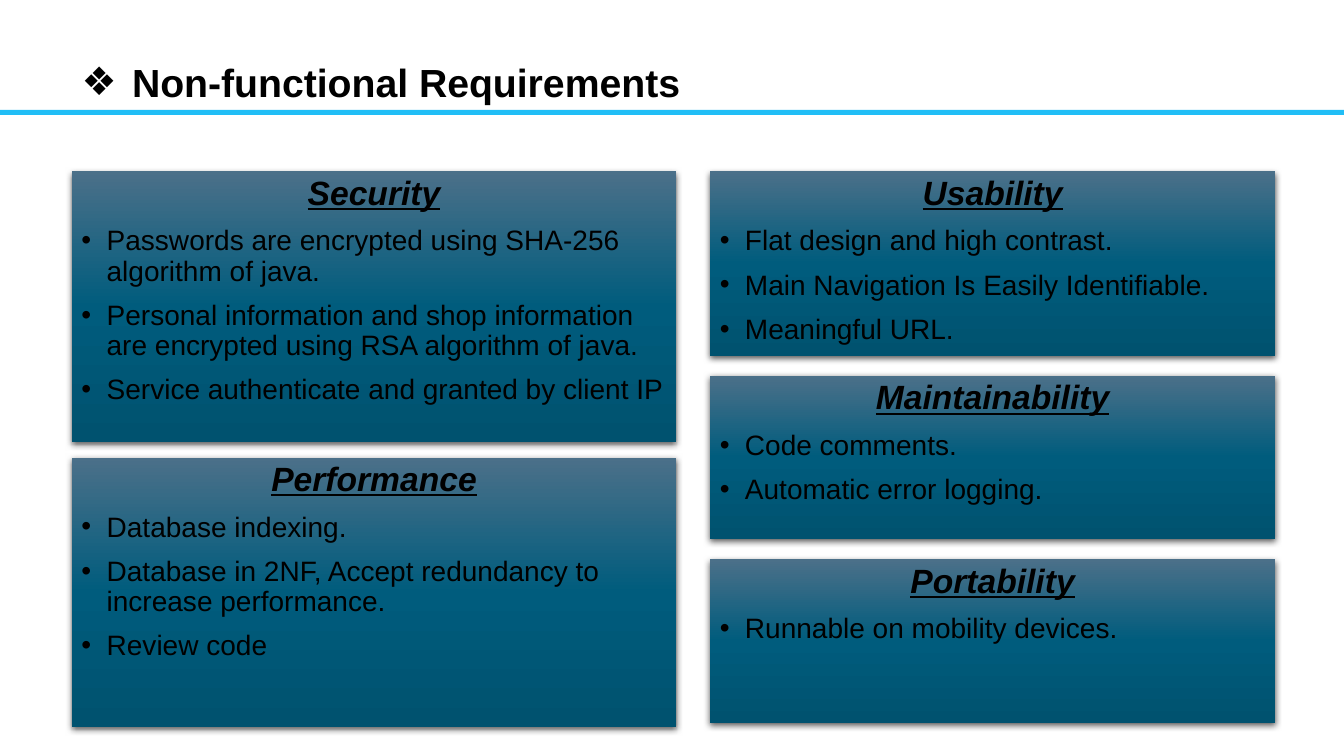
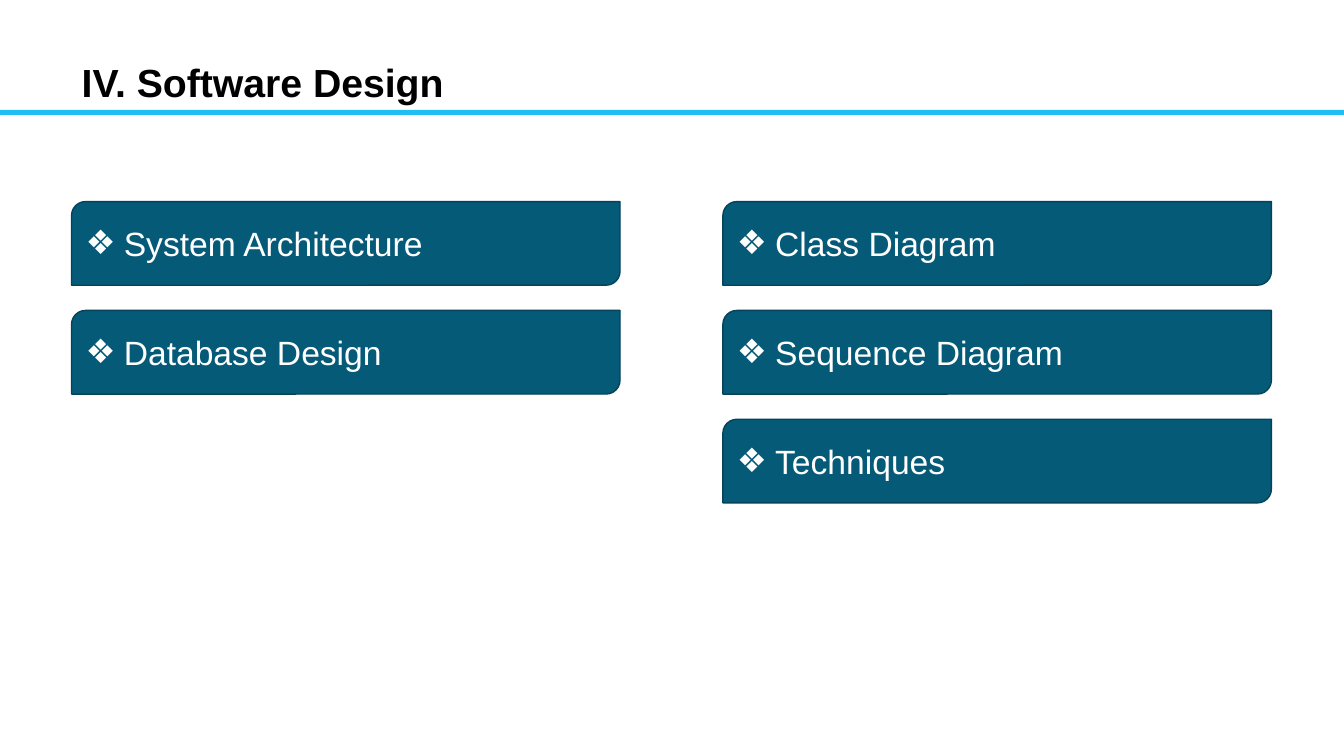
from copy import deepcopy

from pptx import Presentation
from pptx.dml.color import RGBColor
from pptx.enum.shapes import MSO_SHAPE
from pptx.enum.text import MSO_ANCHOR, PP_ALIGN
from pptx.oxml import parse_xml
from pptx.oxml.ns import nsdecls, qn
from pptx.util import Inches, Pt

SLIDE_W, SLIDE_H = 13.33, 7.5
MARGIN = 0.71
COLORS = {
    "band": "21BEF6",
    "text": "000000",
    "card_top": "4B7089",
    "card_middle": "005C7D",
    "card_bottom": "00526F",
    "tile": "055A78",
    "tile_edge": "044359",
    "tile_text": "FFFFFF",
}
FONTS = {
    "title": {"name": "Arial", "size": Pt(28), "bold": True},
    "heading": {"name": "Arial", "size": Pt(24), "bold": True, "italic": True, "underline": True},
    "body": {"name": "Arial", "size": Pt(20)},
    "tile": {"name": "Arial", "size": Pt(24)},
}
CARD_PARAGRAPH = {"line_spacing": 0.9, "space_after": Pt(0)}

# Each column: left, width, gap, then cards of (height, heading, points)
REQUIREMENTS = [
    (MARGIN, 6, 0.15, [
        (2.69, "Security", [
            "Passwords are encrypted using SHA-256 algorithm of java.",
            "Personal information and shop information are encrypted using RSA algorithm of java.",
            "Service authenticate and granted by client IP",
        ]),
        (2.67, "Performance", [
            "Database indexing.",
            "Database in 2NF, Accept redundancy to increase performance.",
            "Review code",
        ]),
    ]),
    (7.04, 5.61, 0.2, [
        (1.83, "Usability", [
            "Flat design and high contrast.",
            "Main Navigation Is Easily Identifiable.",
            "Meaningful URL.",
        ]),
        (1.62, "Maintainability", ["Code comments.", "Automatic error logging."]),
        (1.62, "Portability", ["Runnable on mobility devices."]),
    ]),
]
DESIGN_TOPICS = [
    (MARGIN, ["System Architecture", "Database Design"]),
    (7.17, ["Class Diagram", "Sequence Diagram", "Techniques"]),
]


def rgb(color):
    return RGBColor.from_string(COLORS[color])


def apply(target, values):
    for attribute, value in values.items():
        setattr(target, attribute, value)


def write(paragraph, text, style, color, bullet=None, indent=0):
    """Fill a paragraph; a bullet hangs in the indent (inches)."""
    paragraph.text = text
    if bullet:
        properties = paragraph._p.get_or_add_pPr()
        properties.set("marL", str(Inches(indent)))
        properties.set("indent", str(-Inches(indent)))
        properties.append(parse_xml(f'<a:buFont {nsdecls("a")} typeface="Arial"/>'))
        properties.append(parse_xml(f'<a:buChar {nsdecls("a")} char="{bullet}"/>'))
    font = paragraph.runs[0].font
    apply(font, FONTS[style])
    font.color.rgb = rgb(color)


def add_box(slide, preset, box):
    shape = slide.shapes.add_shape(preset, *map(Inches, box))
    shape.shadow.inherit = False
    shape.text_frame.word_wrap = True
    return shape


def add_titled_slide(prs, title, bullet=None):
    slide = prs.slides.add_slide(prs.slide_layouts[5])
    band = add_box(slide, MSO_SHAPE.RECTANGLE, (0, 1.09, SLIDE_W, 0.05))
    band.fill.solid()
    band.fill.fore_color.rgb = rgb("band")
    band.line.fill.background()

    heading = slide.shapes.title
    apply(heading, {"left": Inches(MARGIN), "top": Inches(0.53),
                    "width": Inches(8.25), "height": Inches(0.57)})
    heading.text_frame.vertical_anchor = MSO_ANCHOR.MIDDLE
    paragraph = heading.text_frame.paragraphs[0]
    paragraph.alignment = PP_ALIGN.LEFT
    write(paragraph, title, "title", "text", bullet, 0.5)
    return slide


def fill_card(card):
    """Three-stop vertical gradient with a soft shadow below."""
    card.fill.gradient()
    stop_list = card._element.spPr.find(qn("a:gradFill")).find(qn("a:gsLst"))
    stop_list.append(deepcopy(stop_list[-1]))
    shades = ("card_top", "card_middle", "card_bottom")
    for number, (stop, shade) in enumerate(zip(card.fill.gradient_stops, shades)):
        stop.position = number / 2
        stop.color.rgb = rgb(shade)
    card.fill.gradient_angle = 270
    card.line.fill.background()
    card._element.spPr.find(qn("a:effectLst")).append(parse_xml(
        f'<a:outerShdw {nsdecls("a")} blurRad="{Pt(4.5)}" dist="{Pt(1.5)}" dir="5400000" '
        'algn="ctr" rotWithShape="0"><a:srgbClr val="000000"><a:alpha val="63000"/>'
        '</a:srgbClr></a:outerShdw>'))


def add_card(slide, box, heading, points):
    card = add_box(slide, MSO_SHAPE.RECTANGLE, box)
    fill_card(card)
    frame = card.text_frame
    frame.vertical_anchor = MSO_ANCHOR.TOP
    first = frame.paragraphs[0]
    apply(first, {**CARD_PARAGRAPH, "alignment": PP_ALIGN.CENTER})
    write(first, heading, "heading", "text")
    for point in points:
        paragraph = frame.add_paragraph()
        apply(paragraph, {**CARD_PARAGRAPH, "alignment": PP_ALIGN.LEFT, "space_before": Pt(10)})
        write(paragraph, point, "body", "text", "•", 0.25)


def add_tile(slide, box, topic):
    tile = add_box(slide, MSO_SHAPE.ROUND_2_DIAG_RECTANGLE, box)
    tile.fill.solid()
    tile.fill.fore_color.rgb = rgb("tile")
    tile.line.color.rgb = rgb("tile_edge")
    tile.line.width = Pt(1)
    tile.text_frame.vertical_anchor = MSO_ANCHOR.MIDDLE
    paragraph = tile.text_frame.paragraphs[0]
    paragraph.alignment = PP_ALIGN.LEFT
    write(paragraph, topic, "tile", "tile_text", "❖", 0.38)


def build_requirements(prs):
    slide = add_titled_slide(prs, "Non-functional Requirements", "❖")
    for left, width, gap, cards in REQUIREMENTS:
        top = 1.7
        for height, heading, points in cards:
            add_card(slide, (left, top, width, height), heading, points)
            top += height + gap


def build_design(prs):
    slide = add_titled_slide(prs, "IV. Software Design")
    height, gap = 0.83, 0.25
    for left, topics in DESIGN_TOPICS:
        for row, topic in enumerate(topics):
            add_tile(slide, (left, 2 + row * (height + gap), 5.44, height), topic)


def main():
    prs = Presentation()
    prs.slide_width, prs.slide_height = Inches(SLIDE_W), Inches(SLIDE_H)
    build_requirements(prs)
    build_design(prs)
    prs.save("out.pptx")


if __name__ == "__main__":
    main()
